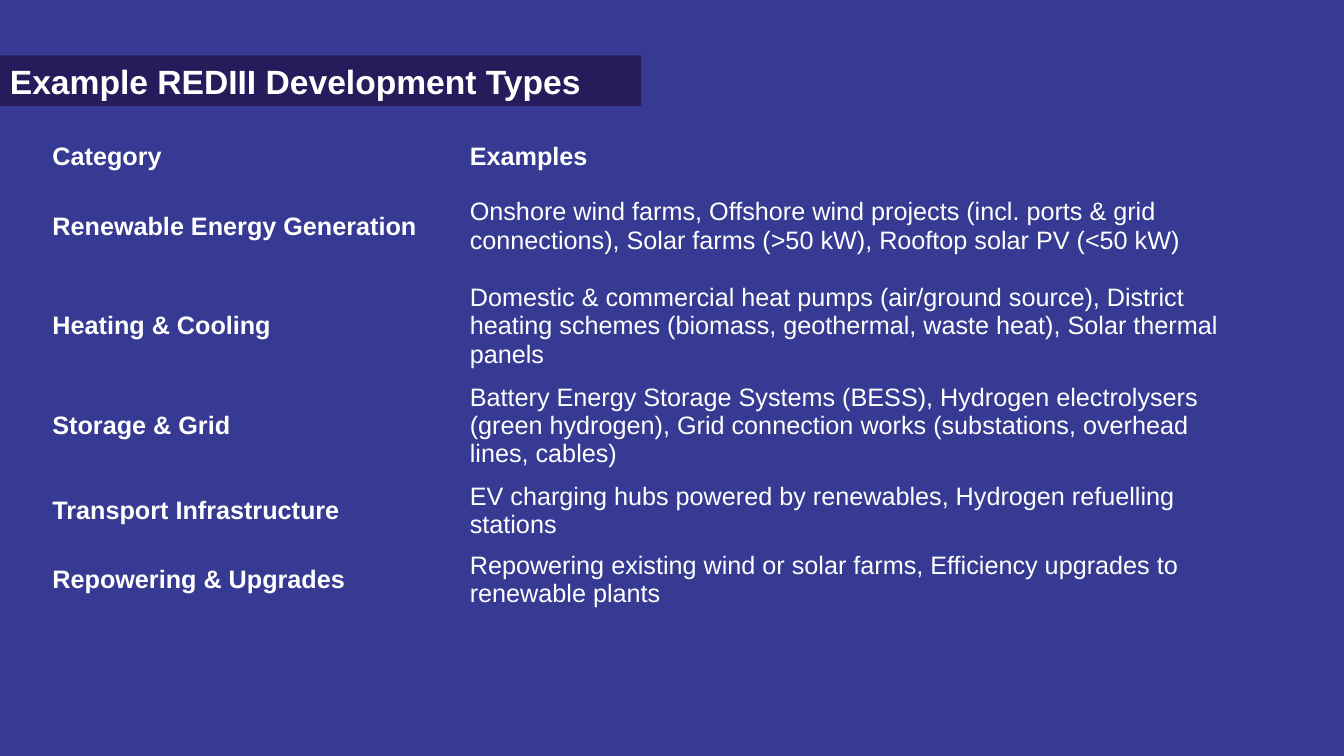
from pptx import Presentation
from pptx.dml.color import RGBColor as RGB
from pptx.enum.shapes import MSO_SHAPE as Kind
from pptx.enum.text import MSO_ANCHOR as Anchor, PP_ALIGN as Align
from pptx.oxml.ns import qn
from pptx.util import Inches, Pt

TITLE = "Example REDIII Development Types"
ROWS = [
    ("Category", "Examples"),
    ("Renewable Energy Generation",
     "Onshore wind farms, Offshore wind projects (incl. ports & grid connections), "
     "Solar farms (>50 kW), Rooftop solar PV (<50 kW)"),
    ("Heating & Cooling",
     "Domestic & commercial heat pumps (air/ground source), District heating schemes "
     "(biomass, geothermal, waste heat), Solar thermal panels"),
    ("Storage & Grid",
     "Battery Energy Storage Systems (BESS), Hydrogen electrolysers (green hydrogen), "
     "Grid connection works (substations, overhead lines, cables)"),
    ("Transport Infrastructure",
     "EV charging hubs powered by renewables, Hydrogen refuelling stations"),
    ("Repowering & Upgrades",
     "Repowering existing wind or solar farms, Efficiency upgrades to renewable plants"),
]
WIDTHS = [4.14, 7.97]
HEIGHTS = [0.4, 0.99, 0.99, 0.99, 0.69, 0.69]
COLORS = {"back": "363A92", "band": "271B5B", "text": "FFFFFF"}
PLAIN = "{2D5ABB26-0587-4C30-8999-92F81FD0307C}"  # no style, no grid


def color(name):
    return RGB.from_string(COLORS[name])


def write(frame, text, size, bold):
    para = frame.paragraphs[0]
    para.text = text
    para.alignment = Align.LEFT
    font = para.font
    font.name, font.size, font.bold = "Arial", Pt(size), bold
    font.color.rgb = color("text")


deck = Presentation()
deck.slide_width, deck.slide_height = Inches(13.33), Inches(7.5)
slide = deck.slides.add_slide(deck.slide_layouts[6])
back = slide.background.fill
back.solid()
back.fore_color.rgb = color("back")

# Title band
band = slide.shapes.add_shape(
    Kind.RECTANGLE, 0, Inches(0.55), Inches(6.36), Inches(0.5))
band.shadow.inherit = False
band.fill.solid()
band.fill.fore_color.rgb = color("band")
band.line.fill.background()
band.text_frame.word_wrap = True
band.text_frame.vertical_anchor = Anchor.MIDDLE
write(band.text_frame, TITLE, 24, True)

# Table of development types
holder = slide.shapes.add_table(
    len(ROWS), len(WIDTHS), Inches(0.42), Inches(1.35),
    Inches(sum(WIDTHS)), Inches(sum(HEIGHTS)))
table = holder.table
table.horz_banding = False
for style in holder.element.iter(qn("a:tableStyleId")):
    style.text = PLAIN
for col, width in zip(table.columns, WIDTHS):
    col.width = Inches(width)
for r, (height, texts) in enumerate(zip(HEIGHTS, ROWS)):
    table.rows[r].height = Inches(height)
    for c, text in enumerate(texts):
        cell = table.cell(r, c)
        cell.fill.background()
        cell.vertical_anchor = Anchor.MIDDLE
        write(cell.text_frame, text, 18, r == 0 or c == 0)

deck.save("out.pptx")
